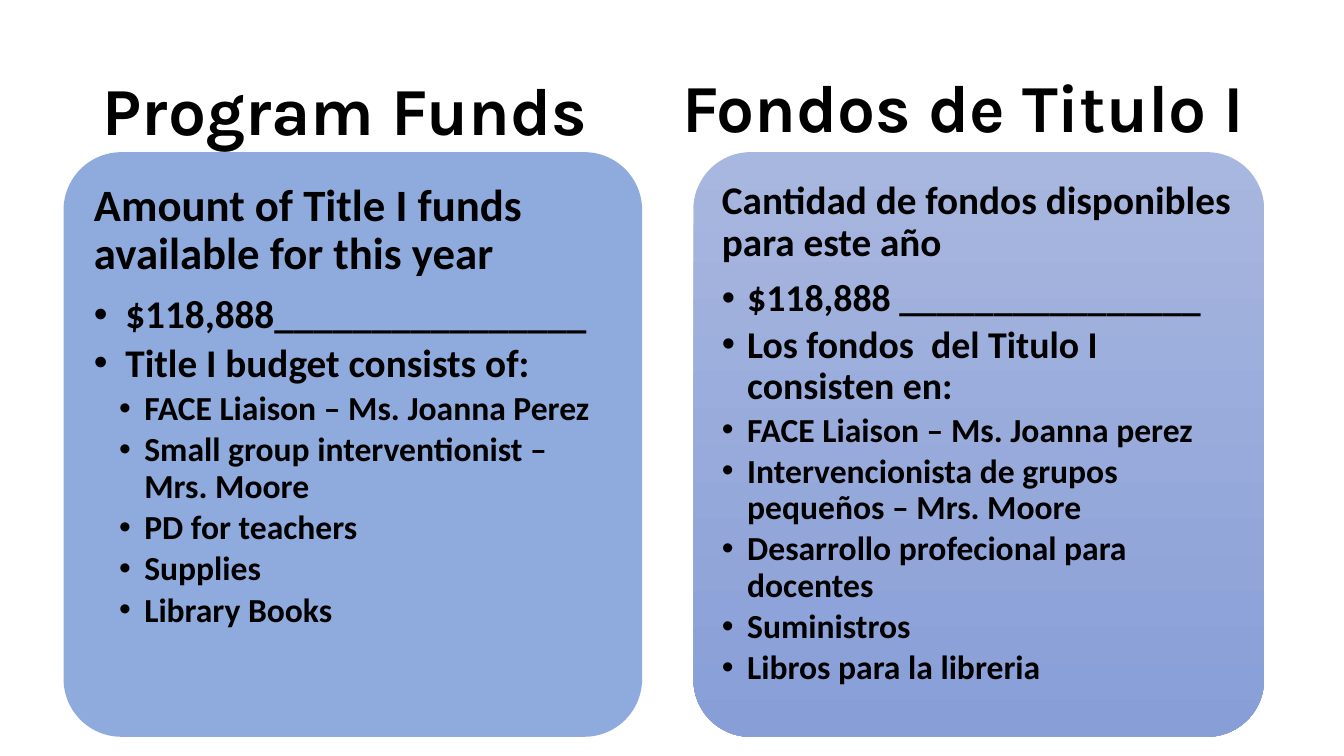
from dataclasses import dataclass

from lxml.etree import SubElement
from pptx import Presentation
from pptx.dml.color import RGBColor
from pptx.enum.shapes import MSO_SHAPE
from pptx.enum.text import MSO_ANCHOR, MSO_AUTO_SIZE, PP_ALIGN
from pptx.oxml.ns import qn
from pptx.util import Pt


@dataclass(frozen=True)
class Theme:
    ink: RGBColor = RGBColor.from_string("000000")
    blue: tuple = ("8FAADC",)
    lavender: tuple = ("A8B7DF", "889ED7")
    title_font: str = "Karla"
    body_font: str = "Calibri"
    title: int = 48
    lead: int = 32
    lead_small: int = 28
    point: int = 28
    point_small: int = 27
    detail: int = 24


theme = Theme()


def add_run(p, text, font, size):
    r = p.add_run()
    r.text = text
    for name, value in {"name": font, "size": Pt(size), "bold": True}.items():
        setattr(r.font, name, value)
    r.font.color.rgb = theme.ink


def set_bullet(p, left, hanging):
    pPr = p._p.get_or_add_pPr()
    pPr.set("marL", str(Pt(left)))
    pPr.set("indent", str(-Pt(hanging)))
    SubElement(pPr, qn("a:buFont")).set("typeface", "Arial")
    SubElement(pPr, qn("a:buChar")).set("char", "•")


prs = Presentation()
prs.slide_width, prs.slide_height = Pt(960), Pt(540)
s = prs.slides.add_slide(prs.slide_layouts[5])

# Headings
english = s.shapes.title
spanish = s.shapes.add_textbox(Pt(480.2), Pt(43.2), Pt(479.5), Pt(65.5))
for name, value in {"left": 66.2, "top": 28.8, "width": 414, "height": 104.4}.items():
    setattr(english, name, Pt(value))
for sp, text, anchor, spacing in [
    (english, "Program Funds", MSO_ANCHOR.MIDDLE, 0.9),
    (spanish, "Fondos de Titulo I", MSO_ANCHOR.TOP, 1.0),
]:
    tf = sp.text_frame
    for name, value in {"word_wrap": True, "auto_size": MSO_AUTO_SIZE.NONE,
                        "vertical_anchor": anchor}.items():
        setattr(tf, name, value)
    p = tf.paragraphs[0]
    p.alignment, p.line_spacing = PP_ALIGN.LEFT, spacing
    add_run(p, text, theme.title_font, theme.title)

# Panels: left, width, inset, fill colours, lead, lead size,
# then groups of bullets: size, left margin, hanging indent, texts
panels = [
    (45.4, 413.3, 9.6, theme.blue,
     "Amount of Title I funds available for this year", theme.lead, [
         (theme.point, 22.5, 22.5, [
             "$118,888________________",
             "Title I budget consists of:"]),
         (theme.detail, 36, 18, [
             "FACE Liaison – Ms. Joanna Perez",
             "Small group interventionist – Mrs. Moore",
             "PD for teachers",
             "Supplies",
             "Library Books"]),
     ]),
    (495.4, 407.5, 8.4, theme.lavender,
     "Cantidad de fondos disponibles para este año", theme.lead_small, [
         (theme.point_small, 18, 18, [
             "$118,888 ________________",
             "Los fondos  del Titulo I consisten en:"]),
         (theme.detail, 18, 18, [
             "FACE Liaison – Ms. Joanna perez",
             "Intervencionista de grupos pequeños – Mrs. Moore",
             "Desarrollo profecional para docentes",
             "Suministros",
             "Libros para la libreria"]),
     ]),
]
for left, width, inset, colors, lead, lead_size, groups in panels:
    sp = s.shapes.add_shape(MSO_SHAPE.ROUNDED_RECTANGLE,
                            Pt(left), Pt(108.7), Pt(width), Pt(417.6))
    sp.adjustments[0] = 0.1
    sp.shadow.inherit = False
    sp.line.fill.background()
    if len(colors) == 1:
        sp.fill.solid()
        sp.fill.fore_color.rgb = RGBColor.from_string(colors[0])
    else:
        sp.fill.gradient()
        sp.fill.gradient_angle = 270
        for i, (stop, color) in enumerate(zip(sp.fill.gradient_stops, colors)):
            stop.position = i
            stop.color.rgb = RGBColor.from_string(color)

    tf = sp.text_frame
    tf.word_wrap, tf.vertical_anchor = True, MSO_ANCHOR.TOP
    for side in ("left", "top", "right", "bottom"):
        setattr(tf, f"margin_{side}", Pt(inset))
    p = tf.paragraphs[0]
    p.alignment, p.line_spacing, p.space_after = PP_ALIGN.LEFT, 0.9, Pt(0.35 * lead_size)
    add_run(p, lead, theme.body_font, lead_size)
    for size, margin, hanging, texts in groups:
        for text in texts:
            p = tf.add_paragraph()
            p.alignment, p.line_spacing, p.space_after = PP_ALIGN.LEFT, 0.9, Pt(0.15 * size)
            set_bullet(p, margin, hanging)
            add_run(p, text, theme.body_font, size)

prs.save("out.pptx")
